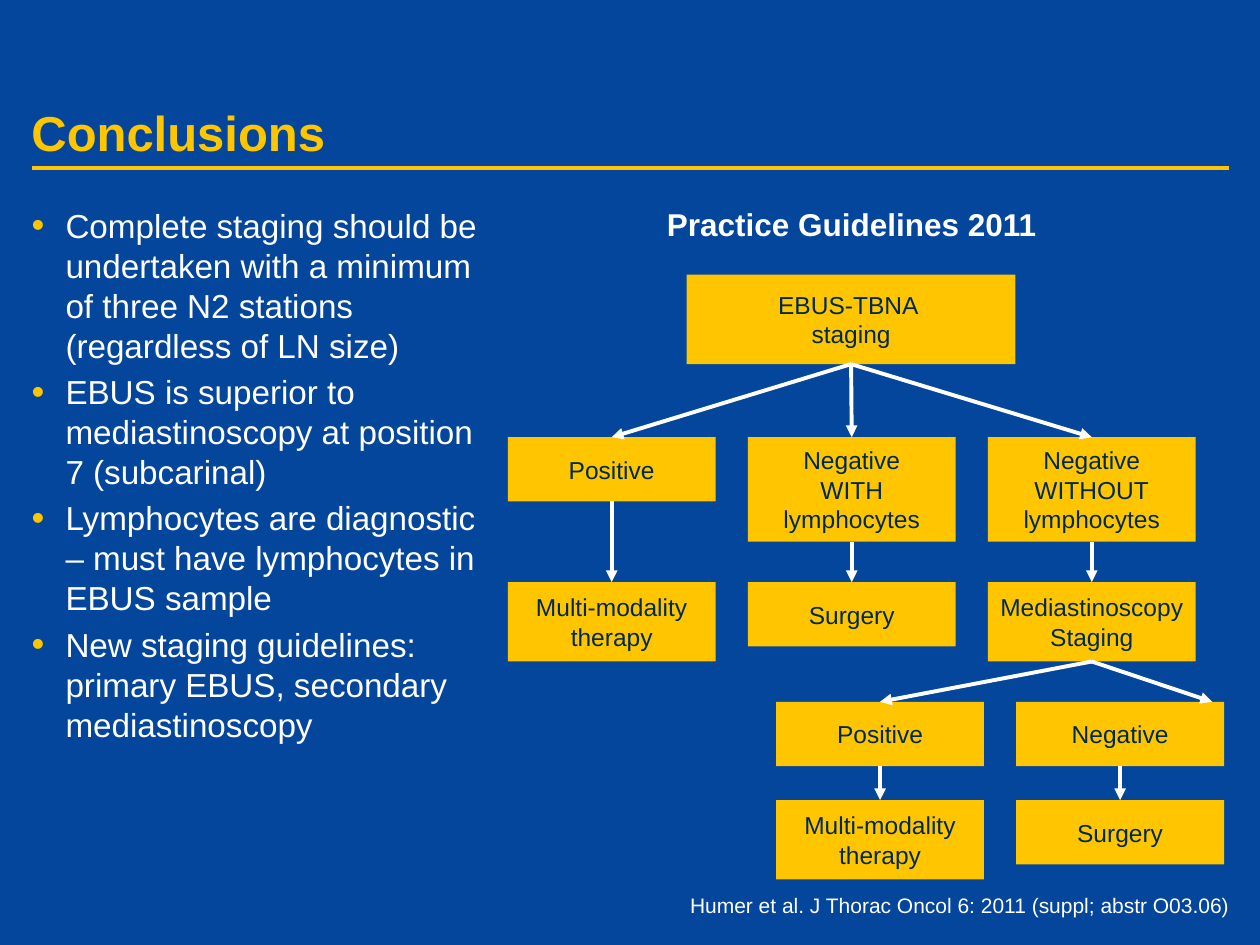
from pptx import Presentation
from pptx.dml.color import RGBColor
from pptx.enum.shapes import MSO_CONNECTOR as Link, MSO_SHAPE as Preset
from pptx.enum.text import MSO_ANCHOR as Anchor, PP_ALIGN as Align
from pptx.oxml.ns import qn
from pptx.util import Inches, Pt
from lxml.etree import SubElement

BLUE = RGBColor(0x03, 0x46, 0x9C)
YELLOW = RGBColor(0xFF, 0xC6, 0x00)
NAVY = RGBColor(0x00, 0x28, 0x50)
WHITE = RGBColor(0xFF, 0xFF, 0xFF)
TOP, BOTTOM = 0, 2

BULLETS = [
    "Complete staging should be undertaken with a minimum of three N2 stations (regardless of LN size)",
    "EBUS is superior to mediastinoscopy at position 7 (subcarinal)",
    "Lymphocytes are diagnostic – must have lymphocytes in EBUS sample",
    "New staging guidelines: primary EBUS, secondary mediastinoscopy",
]

BOX_WIDTH, COLUMN_STEP = 1.65, 1.905
LEFT, MIDDLE, RIGHT = [4.03 + COLUMN_STEP * i for i in range(3)]
LOWER_LEFT, LOWER_RIGHT = [6.16 + COLUMN_STEP * i for i in range(2)]
FINDING_TOP, ACTION_TOP, RESULT_TOP, THERAPY_TOP = 3.47, 4.62, 5.57, 6.35
ONE_LINE, TWO_LINES, THREE_LINES = 0.51, 0.63, 0.83

# name: (left, top, width, height, paragraphs); \v is a line break
BOXES = {
    "staging": (5.45, 2.18, 2.61, 0.71, ["EBUS-TBNA \vstaging"]),
    "positive": (LEFT, FINDING_TOP, BOX_WIDTH, ONE_LINE, ["Positive"]),
    "with": (MIDDLE, FINDING_TOP, BOX_WIDTH, THREE_LINES, ["Negative", "WITH\vlymphocytes"]),
    "without": (RIGHT, FINDING_TOP, BOX_WIDTH, THREE_LINES, ["Negative", "WITHOUT\vlymphocytes"]),
    "therapy": (LEFT, ACTION_TOP, BOX_WIDTH, TWO_LINES, ["Multi-modality\vtherapy"]),
    "surgery": (MIDDLE, ACTION_TOP, BOX_WIDTH, ONE_LINE, ["Surgery"]),
    "mediastinoscopy": (RIGHT, ACTION_TOP, BOX_WIDTH, TWO_LINES, ["Mediastinoscopy", "Staging"]),
    "second positive": (LOWER_LEFT, RESULT_TOP, BOX_WIDTH, ONE_LINE, ["Positive"]),
    "second negative": (LOWER_RIGHT, RESULT_TOP, BOX_WIDTH, ONE_LINE, ["Negative"]),
    "second therapy": (LOWER_LEFT, THERAPY_TOP, BOX_WIDTH, TWO_LINES, ["Multi-modality\vtherapy"]),
    "second surgery": (LOWER_RIGHT, THERAPY_TOP, BOX_WIDTH, ONE_LINE, ["Surgery"]),
}

ARROWS = [
    ("staging", "positive"), ("staging", "with"), ("staging", "without"),
    ("positive", "therapy"), ("with", "surgery"), ("without", "mediastinoscopy"),
    ("mediastinoscopy", "second positive"),
    ("second positive", "second therapy"), ("second negative", "second surgery"),
]


class SlideBuilder:
    """Holds the style and the current slide."""

    font_name = "Arial"
    line_width = Pt(2.25)

    def __init__(self, page):
        self.page = page
        page.background.fill.solid()
        page.background.fill.fore_color.rgb = BLUE

    def set_text(self, frame, lines, size, color, bold=False, margins=None, frame_format=None, **para_format):
        for side, value in zip(("left", "top", "right", "bottom"), margins or ()):
            setattr(frame, f"margin_{side}", Inches(value))
        for name, value in {"word_wrap": True, **(frame_format or {})}.items():
            setattr(frame, name, value)
        for index, line in enumerate(lines):
            para = frame.add_paragraph() if index else frame.paragraphs[0]
            para.text = line
            for name, value in para_format.items():
                setattr(para, name, value)
            for span in para.runs:
                for name, value in {"name": self.font_name, "size": Pt(size), "bold": bold}.items():
                    setattr(span.font, name, value)
                span.font.color.rgb = color

    def text(self, left, top, width, height, lines, size, color, **formats):
        box = self.page.shapes.add_textbox(*map(Inches, (left, top, width, height)))
        self.set_text(box.text_frame, lines, size, color, **formats)
        return box

    def bullets(self, *args, **formats):
        box = self.text(*args, **formats)
        for para in box.text_frame.paragraphs:
            props = para._p.get_or_add_pPr()
            props.set("marL", str(Inches(0.27)))
            props.set("indent", str(-Inches(0.27)))
            color = SubElement(props, qn("a:buClr"))
            SubElement(color, qn("a:srgbClr"), val=str(YELLOW))
            SubElement(props, qn("a:buSzPct"), val="110000")
            SubElement(props, qn("a:buFont"), typeface=self.font_name)
            SubElement(props, qn("a:buChar"), char="•")

    def box(self, left, top, width, height, lines):
        box = self.page.shapes.add_shape(Preset.RECTANGLE, *map(Inches, (left, top, width, height)))
        box.shadow.inherit = False
        box.fill.solid()
        box.fill.fore_color.rgb = YELLOW
        box.line.fill.background()
        self.set_text(box.text_frame, lines, 14, NAVY, alignment=Align.CENTER,
                      frame_format={"vertical_anchor": Anchor.MIDDLE})
        return box

    def line(self, start, end, color):
        line = self.page.shapes.add_connector(Link.STRAIGHT, *map(Inches, start + end))
        line.line.color.rgb = color
        line.line.width = self.line_width
        SubElement(line._element.spPr, qn("a:effectLst"))
        return line

    def arrow(self, source, target=None, end=(0, 0)):
        """Run from the bottom of source to the top of target, or to a free end."""
        arrow = self.line((0, 0), end, WHITE)
        arrow.begin_connect(source, BOTTOM)
        if target is not None:
            arrow.end_connect(target, TOP)
        SubElement(arrow._element.spPr.find(qn("a:ln")), qn("a:tailEnd"), type="triangle")


def main():
    deck = Presentation()
    deck.slide_width, deck.slide_height = Inches(10), Inches(7.5)
    slide = SlideBuilder(deck.slides.add_slide(deck.slide_layouts[6]))

    slide.line((0.25, 1.33), (9.75, 1.33), YELLOW)
    slide.text(0.25, 0.25, 9.5, 1.03, ["Conclusions"], 28, YELLOW, bold=True,
               margins=(0, 0.05, 0, 0), frame_format={"vertical_anchor": Anchor.BOTTOM})
    slide.bullets(0.25, 1.58, 3.65, 5.28, BULLETS, 19, WHITE,
                  margins=(0, 0.05, 0, 0.05), space_before=Pt(3.8))
    slide.text(5, 7.08, 4.76, 0.2, ["Humer et al. J Thorac Oncol 6: 2011 (suppl; abstr O03.06)"],
               12, WHITE, margins=(0, 0, 0, 0), alignment=Align.RIGHT)
    slide.text(5.18, 1.58, 3.16, 0.4, ["Practice Guidelines 2011"], 18, WHITE, bold=True,
               frame_format={"word_wrap": False}, alignment=Align.CENTER)

    boxes = {name: slide.box(*values) for name, values in BOXES.items()}
    for source, target in ARROWS:
        slide.arrow(boxes[source], boxes[target])
    slide.arrow(boxes["mediastinoscopy"], end=(9.62, RESULT_TOP))

    deck.save("out.pptx")


if __name__ == "__main__":
    main()
